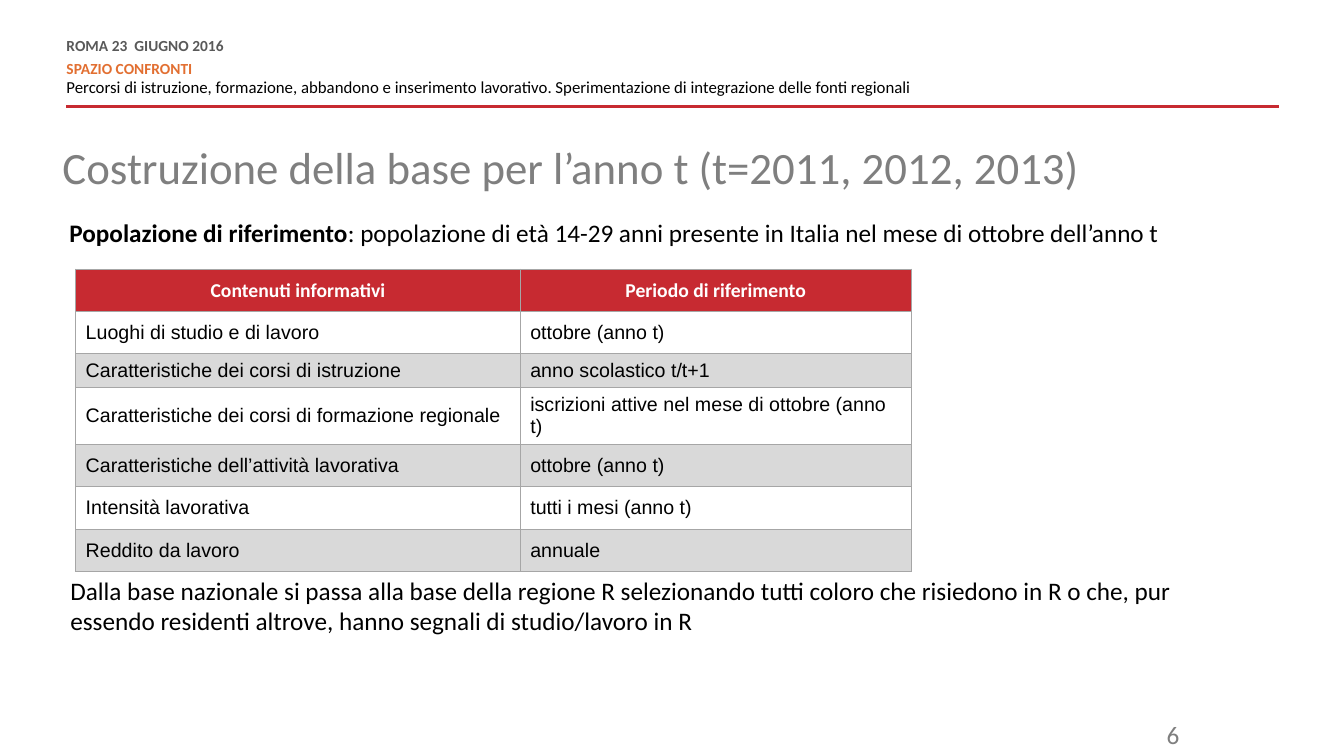
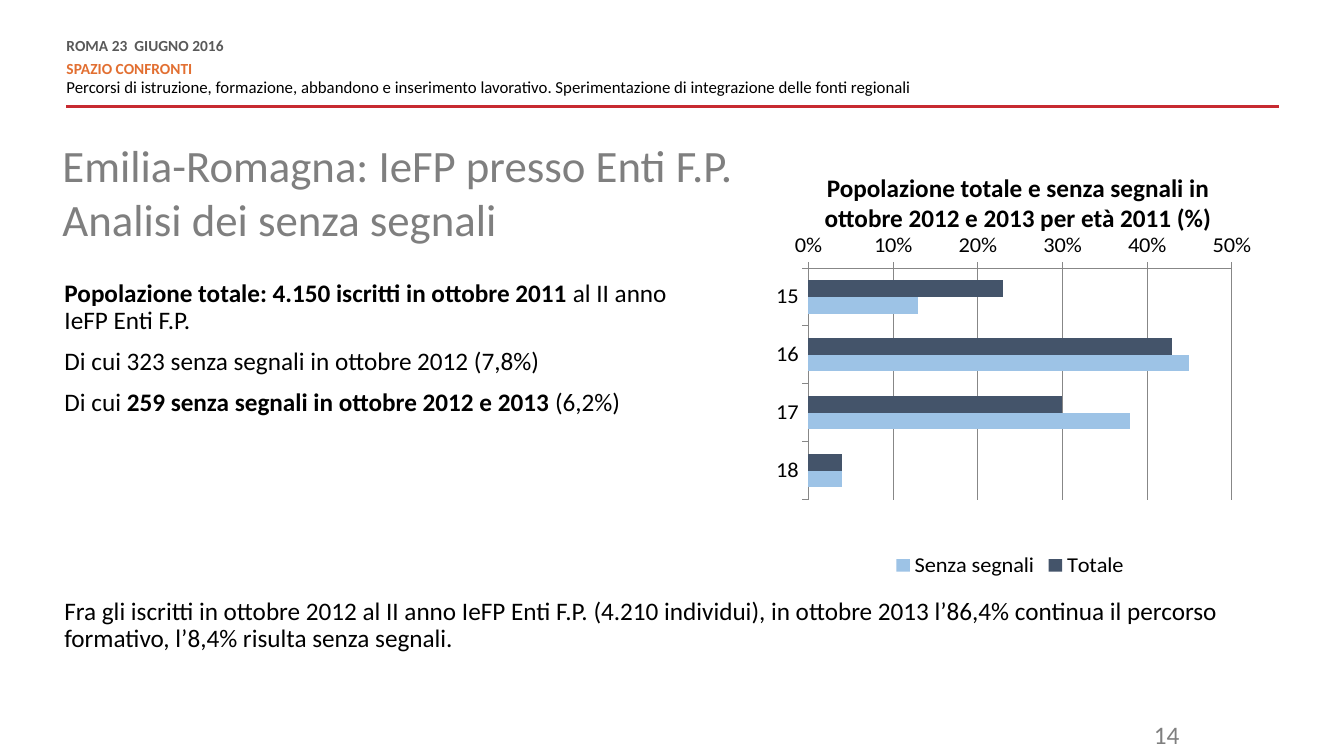
from lxml import etree
from pptx import Presentation
from pptx.chart.data import CategoryChartData
from pptx.dml.color import RGBColor
from pptx.enum.chart import (XL_AXIS_CROSSES as CROSSES, XL_CHART_TYPE as CHART,
                             XL_LEGEND_POSITION as LEGEND, XL_TICK_MARK as TICK)
from pptx.enum.shapes import MSO_CONNECTOR as CONN
from pptx.enum.text import MSO_ANCHOR as ANCHOR, PP_ALIGN as ALIGN
from pptx.oxml import parse_xml
from pptx.oxml.ns import nsdecls, qn
from pptx.util import Inches, Pt

RED, ORANGE, BLACK, WHITE = "C72A31", "E26F31", "000000", "FFFFFF"
GRAY, DARK_GRAY, LIGHT_GRAY, BORDER = "7F7F7F", "595959", "D9D9D9", "A6A6A6"
NAVY, SKY, GRID = "44546A", "9DC3E6", "878787"
FONT = "Calibri"

prs = Presentation()
prs.slide_width, prs.slide_height = Inches(13.33), Inches(7.5)
# Lengths are percentages of the slide's width and height
COL, ROW = prs.slide_width / 100, prs.slide_height / 100


def rgb(value):
    return RGBColor.from_string(value)


def add_text(s, box, paras, size=18, color=BLACK, align=None, inset=True,
             spacing=None, before=0):
    """Each paragraph is a list of (text, bold) runs."""
    x, y, w, h = box
    tb = s.shapes.add_textbox(int(x * COL), int(y * ROW), int(w * COL), int(h * ROW))
    tf = tb.text_frame
    tf.word_wrap = True
    if not inset:
        tf.margin_left = tf.margin_right = tf.margin_top = tf.margin_bottom = 0
    for i, runs in enumerate(paras):
        p = tf.add_paragraph() if i else tf.paragraphs[0]
        p.alignment = align
        if spacing:
            p.line_spacing = spacing
        if i and before:
            p.space_before = Pt(before)
        p.font.name, p.font.size = FONT, Pt(size)
        p.font.color.rgb = rgb(color)
        for line, bold in runs:
            r = p.add_run()
            r.text = line
            r.font.bold = bold
    return tf


# Shared frame: event header, red rule, title, page number
EVENT = [
    ("ROMA 23  GIUGNO 2016", 11, DARK_GRAY, True, 0, 6),
    ("SPAZIO CONFRONTI", 11, ORANGE, True, 0, 0),
    ("Percorsi di istruzione, formazione, abbandono e inserimento lavorativo. "
     "Sperimentazione di integrazione delle fonti regionali", 12, BLACK, False, 3, 0),
]
PAGES = [
    (["Costruzione della base per l’anno t (t=2011, 2012, 2013)"],
     (4.65, 18.53, 90.85, 15.07), "6"),
    (["Emilia-Romagna: IeFP presso Enti F.P.", "Analisi dei senza segnali"],
     (4.65, 18.27, 50.5, 13.6), "14"),
]
slides = []
for title, title_box, number in PAGES:
    s = prs.slides.add_slide(prs.slide_layouts[6])
    slides.append(s)
    rule = s.shapes.add_connector(CONN.STRAIGHT, int(4.95 * COL), int(14.13 * ROW),
                                  int(95.2 * COL), int(14.13 * ROW))
    rule.line.color.rgb, rule.line.width = rgb(RED), Pt(2)
    etree.SubElement(rule._element.spPr, qn("a:effectLst"))

    tf = add_text(s, (4.95, 5.2, 63.6, 7.87), [[(e[0], e[3])] for e in EVENT],
                  inset=False, spacing=Pt(10.8))
    for p, (_, size, color, _, before, after) in zip(tf.paragraphs, EVENT):
        p.font.size, p.font.color.rgb = Pt(size), rgb(color)
        p.space_before, p.space_after = Pt(before), Pt(after)

    add_text(s, title_box, [[(line, False)] for line in title], 32, GRAY, inset=False)
    add_text(s, (66, 94.53, 22.5, 5.33), [[(number, False)]], color=GRAY, align=ALIGN.RIGHT)

base, region = slides

# Slide 1: reference population and contents table
add_text(base, (4.43, 28.13, 90, 5.33), [[
    ("Popolazione di riferimento", True),
    (": popolazione di età 14-29 anni presente in Italia nel mese di ottobre dell’anno t",
     False)]])
add_text(base, (4.5, 75.47, 86.2, 9.47), [[
    ("Dalla base nazionale si passa alla base della regione R selezionando tutti coloro che "
     "risiedono in R o che, pur essendo residenti altrove, hanno segnali di studio/lavoro in R",
     False)]])

CONTENTS = [
    ("Contenuti informativi", "Periodo di riferimento"),
    ("Luoghi di studio e di lavoro", "ottobre (anno t)"),
    ("Caratteristiche dei corsi di istruzione", "anno scolastico t/t+1"),
    ("Caratteristiche dei corsi di formazione regionale",
     "iscrizioni attive nel mese di ottobre (anno t)"),
    ("Caratteristiche dell’attività lavorativa", "ottobre (anno t)"),
    ("Intensità lavorativa", "tutti i mesi (anno t)"),
    ("Reddito da lavoro", "annuale"),
]
widths = [33.08, 29.1]
heights = [5.6, 5.6, 4.13, 5.6, 5.6, 5.6, 5.6]
table = base.shapes.add_table(len(heights), len(widths), int(5.63 * COL), int(35.6 * ROW),
                              int(sum(widths) * COL), int(sum(heights) * ROW)).table
table.horz_banding = False
for column, width in zip(table.columns, widths):
    column.width = int(width * COL)
for i, (row, height) in enumerate(zip(table.rows, heights)):
    row.height = int(height * ROW)
    head = i == 0
    for cell, label in zip(row.cells, CONTENTS[i]):
        tcPr = cell._tc.get_or_add_tcPr()
        for side in "LRTB":
            tcPr.append(parse_xml(
                f'<a:ln{side} {nsdecls("a")} w="{Pt(0.75)}"><a:solidFill>'
                f'<a:srgbClr val="{BORDER}"/></a:solidFill></a:ln{side}>'))
        cell.fill.solid()
        cell.fill.fore_color.rgb = rgb(RED if head else WHITE if i % 2 else LIGHT_GRAY)
        cell.vertical_anchor = ANCHOR.MIDDLE
        cell.text = label
        p = cell.text_frame.paragraphs[0]
        p.alignment = ALIGN.CENTER if head else ALIGN.LEFT
        p.font.name, p.font.size, p.font.bold = FONT if head else "Arial", Pt(14), head
        p.font.color.rgb = rgb(WHITE if head else BLACK)

# Slide 2: key figures and closing remark
add_text(region, (4.8, 37.07, 46.3, 22.13), [
    [("Popolazione totale: 4.150 iscritti in ottobre 2011 ", True),
     ("al II anno IeFP Enti F.P.", False)],
    [("Di cui 323 senza segnali in ottobre 2012 (7,8%)", False)],
    [("Di cui ", False), ("259 senza segnali in ottobre 2012 e 2013 ", True),
     ("(6,2%)", False)],
], inset=False, spacing=0.9, before=10)
add_text(region, (4.05, 78.53, 90, 8.67), [[
    ("Fra gli iscritti in ottobre 2012 al II anno IeFP Enti F.P. (4.210 individui), in ottobre "
     "2013 l’86,4% continua il percorso formativo, l’8,4% risulta senza segnali.", False)]],
    spacing=0.9)

# Slide 2: bar chart by age
data = CategoryChartData(number_format="0%")
data.categories = ["15", "16", "17", "18"]
data.add_series("Totale", [0.23, 0.43, 0.3, 0.04])
data.add_series("Senza segnali", [0.13, 0.45, 0.38, 0.04])
chart = region.shapes.add_chart(CHART.BAR_CLUSTERED, int(56.4 * COL), int(30.8 * ROW),
                                int(37.5 * COL), int(46.27 * ROW), data).chart
chart.has_title = False
chart.font.name, chart.font.size = FONT, Pt(16)
chart.font.color.rgb = rgb(BLACK)
chart.has_legend = True
chart.legend.position = LEGEND.BOTTOM
chart.legend.include_in_layout = False

plot = chart.plots[0]
plot.gap_width, plot.overlap, plot.vary_by_categories = 150, 0, False
for series, color in zip(plot.series, [NAVY, SKY]):
    series.format.fill.solid()
    series.format.fill.fore_color.rgb = rgb(color)

ages, shares = chart.category_axis, chart.value_axis
ages.reverse_order = True
ages.crosses = CROSSES.MAXIMUM
shares.minimum_scale, shares.maximum_scale, shares.major_unit = 0, 0.5, 0.1
shares.tick_labels.number_format = "0%"
shares.tick_labels.number_format_is_linked = False
shares.has_major_gridlines = True
for axis in (ages, shares):
    axis.major_tick_mark = TICK.OUTSIDE
    axis.format.line.color.rgb = rgb(GRID)
shares.major_gridlines.format.line.color.rgb = rgb(GRID)

plot_area = chart._chartSpace.chart.plotArea
for old in plot_area.findall(qn("c:layout")):
    plot_area.remove(old)
inner = "".join(f'<c:{tag} val="{val}"/>' for tag, val in [
    ("layoutTarget", "inner"), ("xMode", "edge"), ("yMode", "edge"),
    ("x", 0.1), ("y", 0.05), ("w", 0.84), ("h", 0.7)])
plot_area.insert(0, parse_xml(f'<c:layout {nsdecls("c")}><c:manualLayout>{inner}'
                              '</c:manualLayout></c:layout>'))
add_text(region, (60.9, 22.8, 29.7, 8.13), [[
    ("Popolazione totale e senza segnali in ottobre 2012 e 2013 per età 2011 (%)", True)]],
    align=ALIGN.CENTER, inset=False)

prs.save("out.pptx")
